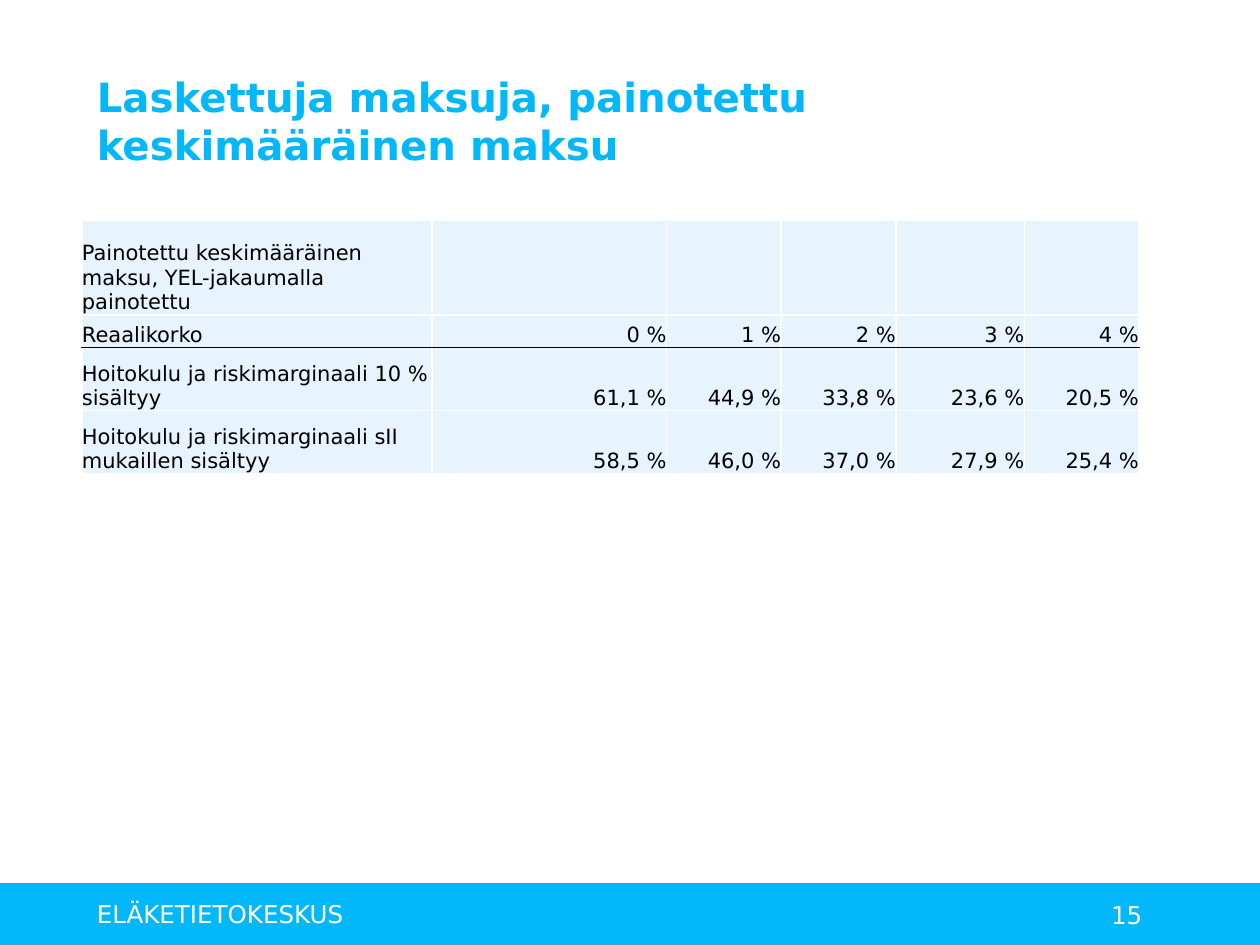
from lxml.etree import Element, SubElement
from pptx import Presentation
from pptx.dml.color import RGBColor
from pptx.enum.shapes import MSO_SHAPE
from pptx.enum.text import MSO_ANCHOR, PP_ALIGN
from pptx.oxml.ns import qn
from pptx.util import Inches, Pt

BLUE, PALE, WHITE, BLACK = "02B7FA", "E7F3FE", "FFFFFF", "000000"
COLUMN_WIDTHS = [2.78, 1.86, 0.91, 0.91, 1.02, 0.91]
ROW_HEIGHTS = [0.75, 0.26, 0.5, 0.5]
HEADER_ROW = 1
PAYMENTS = [
    ["Painotettu keskimääräinen maksu, YEL-jakaumalla painotettu", "", "", "", "", ""],
    ["Reaalikorko", "0 %", "1 %", "2 %", "3 %", "4 %"],
    ["Hoitokulu ja riskimarginaali 10 % sisältyy",
     "61,1 %", "44,9 %", "33,8 %", "23,6 %", "20,5 %"],
    ["Hoitokulu ja riskimarginaali sII mukaillen sisältyy",
     "58,5 %", "46,0 %", "37,0 %", "27,9 %", "25,4 %"],
]


def color(value):
    return RGBColor.from_string(value)


def set_borders(cell, colors):
    """Draw 1 pt cell borders; colors maps the sides L, R, T, B to hex values."""
    properties = cell._tc.get_or_add_tcPr()
    for index, (side, value) in enumerate(colors.items()):
        line = Element(qn(f"a:ln{side}"), w=str(Pt(1)))
        fill = SubElement(line, qn("a:solidFill"))
        SubElement(fill, qn("a:srgbClr"), val=value)
        properties.insert(index, line)


class SlideBuilder:
    def __init__(self, slide, font_name):
        self.slide = slide
        self.font_name = font_name

    def add_text_run(self, paragraph, text, size, text_color, bold=False):
        run = paragraph.add_run()
        run.text = text
        font_format = {"name": self.font_name, "size": Pt(size), "bold": bold}
        for attribute, value in font_format.items():
            setattr(run.font, attribute, value)
        run.font.color.rgb = color(text_color)

    def bar(self, position, fill):
        shape = self.slide.shapes.add_shape(MSO_SHAPE.RECTANGLE, *map(Inches, position))
        shape.shadow.inherit = False
        shape.fill.solid()
        shape.fill.fore_color.rgb = color(fill)
        shape.line.fill.background()

    def text(self, position, text, size, text_color, bold=False):
        frame = self.slide.shapes.add_textbox(*map(Inches, position)).text_frame
        frame.word_wrap = True
        frame.vertical_anchor = MSO_ANCHOR.MIDDLE
        self.add_text_run(frame.paragraphs[0], text, size, text_color, bold)

    def table(self, left, top, rows):
        width, height = sum(COLUMN_WIDTHS), sum(ROW_HEIGHTS)
        table = self.slide.shapes.add_table(
            len(rows), len(COLUMN_WIDTHS), *map(Inches, (left, top, width, height))
        ).table
        table.first_row = table.horz_banding = False
        for column, column_width in zip(table.columns, COLUMN_WIDTHS):
            column.width = Inches(column_width)
        for row, row_height in zip(table.rows, ROW_HEIGHTS):
            row.height = Inches(row_height)
        for row_index, values in enumerate(rows):
            borders = dict.fromkeys("LRTB", WHITE)
            if row_index == HEADER_ROW:
                borders["B"] = BLACK
            elif row_index == HEADER_ROW + 1:
                borders["T"] = BLACK
            for column_index, value in enumerate(values):
                self.cell(table.cell(row_index, column_index), value, borders,
                          PP_ALIGN.RIGHT if column_index else PP_ALIGN.LEFT)

    def cell(self, cell, value, borders, alignment):
        cell_format = {"vertical_anchor": MSO_ANCHOR.BOTTOM, "margin_left": 0,
                       "margin_right": 0, "margin_top": 0, "margin_bottom": 0}
        for attribute, setting in cell_format.items():
            setattr(cell, attribute, setting)
        cell.fill.solid()
        cell.fill.fore_color.rgb = color(PALE)
        set_borders(cell, borders)
        if value:
            paragraph = cell.text_frame.paragraphs[0]
            paragraph.alignment = alignment
            self.add_text_run(paragraph, value, 12, BLACK)


def main():
    presentation = Presentation()
    presentation.slide_width = Inches(10)
    presentation.slide_height = Inches(7.5)
    slide = presentation.slides.add_slide(presentation.slide_layouts[6])
    builder = SlideBuilder(slide, "DejaVu Sans")

    builder.bar((0, 7.01, 10, 0.5), BLUE)
    builder.text((8.72, 7.06, 1.18, 0.4), "15", 14, WHITE)
    builder.text((0.67, 7.05, 5.49, 0.4), "ELÄKETIETOKESKUS", 14, WHITE)
    builder.text((0.67, 0.23, 8.62, 1.45),
                 "Laskettuja maksuja, painotettu keskimääräinen maksu", 23, BLUE, bold=True)
    builder.table(0.65, 1.75, PAYMENTS)

    presentation.save("out.pptx")


if __name__ == "__main__":
    main()
